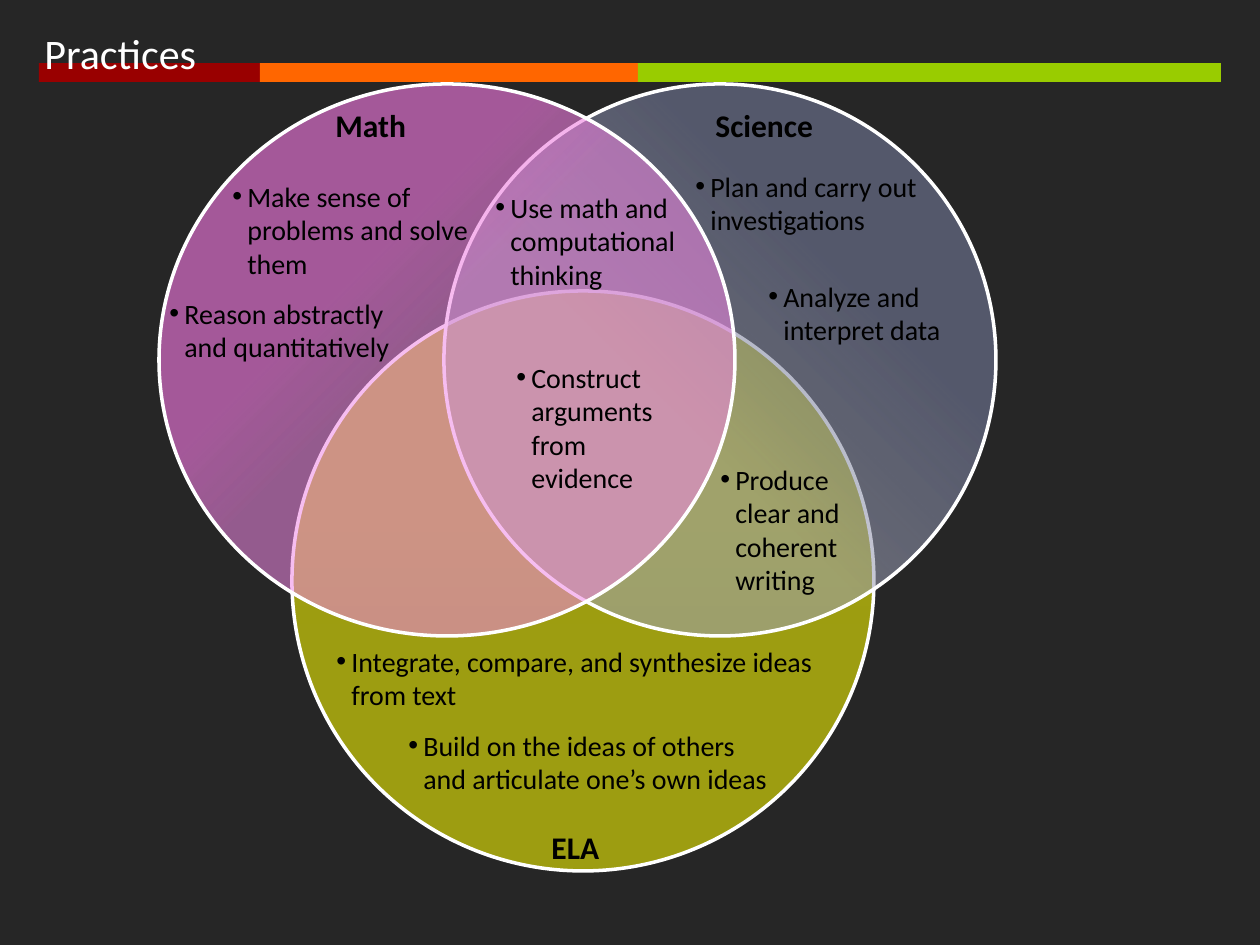
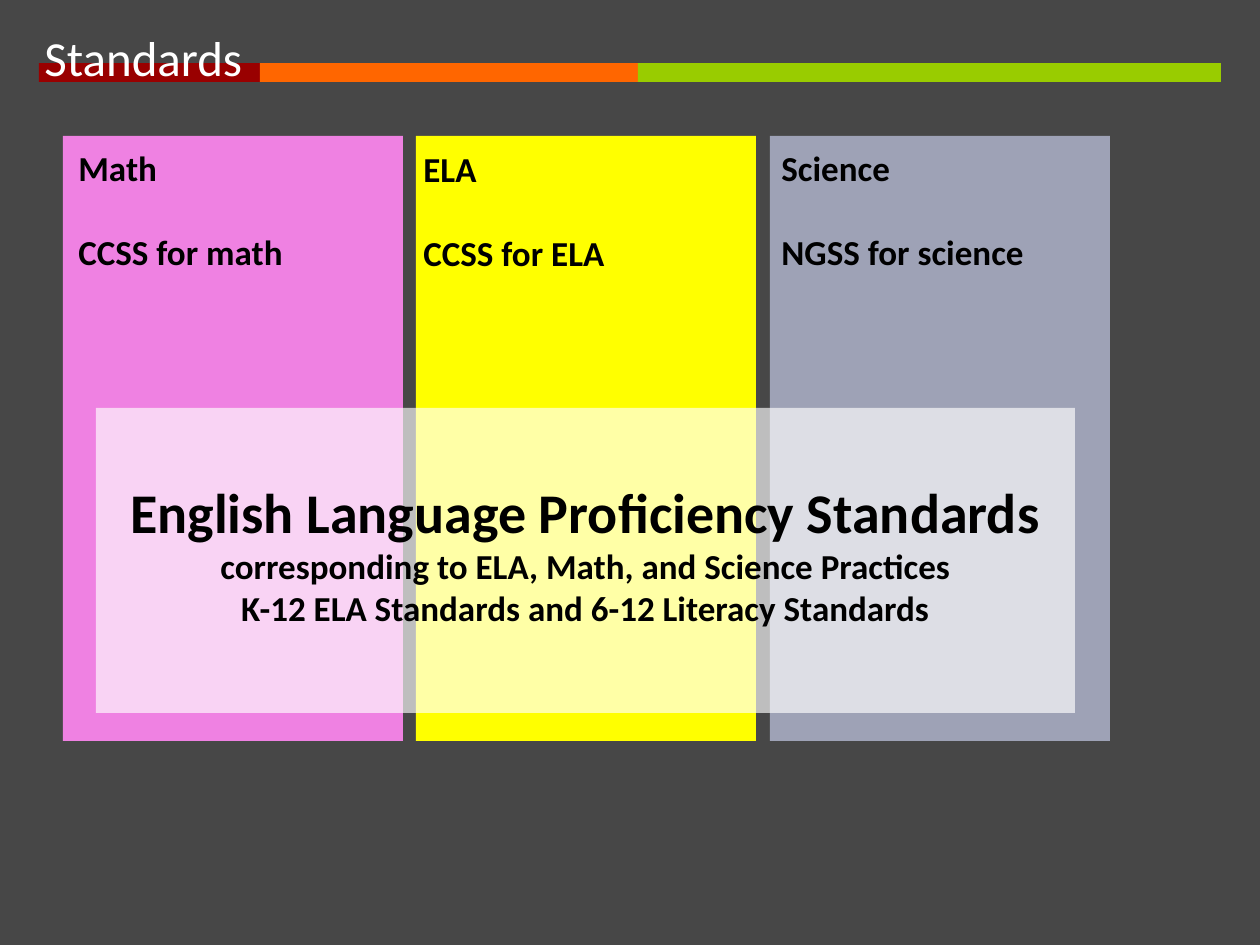
from lxml import etree
from pptx import Presentation
from pptx.dml.color import RGBColor
from pptx.enum.shapes import MSO_SHAPE
from pptx.enum.text import MSO_AUTO_SIZE, PP_ALIGN
from pptx.oxml import parse_xml
from pptx.oxml.ns import nsdecls, qn
from pptx.util import Emu, Pt

RECT, OVAL = MSO_SHAPE.RECTANGLE, MSO_SHAPE.OVAL
LEFT, CENTER = PP_ALIGN.LEFT, PP_ALIGN.CENTER
GROW = MSO_AUTO_SIZE.SHAPE_TO_FIT_TEXT

PX = 914400 / 126
FONT = "Calibri"
BLACK = RGBColor(0x00, 0x00, 0x00)
WHITE = RGBColor(0xFF, 0xFF, 0xFF)
YELLOW = RGBColor(0xFF, 0xFF, 0x00)
PINK = RGBColor(0xEF, 0x81, 0xE2)
GREY_BLUE = RGBColor(0x9E, 0xA2, 0xB6)
VENN_PINK = RGBColor(0xF1, 0x87, 0xE4)
VENN_PINK_DARK = RGBColor(0xEB, 0x75, 0xDA)
VENN_BLUE_DARK = RGBColor(0x6E, 0x74, 0x92)
BANDS = [
    (39, 221, RGBColor(0x99, 0x00, 0x00)),
    (260, 378, RGBColor(0xFF, 0x66, 0x00)),
    (638, 583, RGBColor(0x99, 0xCC, 0x00)),
]


def add_shape(s, kind, box, color):
    sp = s.shapes.add_shape(kind, *[Emu(round(v * PX)) for v in box])
    sp.shadow.inherit = False
    sp.fill.solid()
    sp.fill.fore_color.rgb = color
    sp.line.fill.background()
    return sp


def add_text(s, box, lines, color=BLACK, bold=False, align=LEFT, gap=0, bullet=False):
    """Add one paragraph per (text, size) line, with gap points between lines."""
    tf = s.shapes.add_textbox(*[Emu(round(v * PX)) for v in box]).text_frame
    tf.word_wrap = True
    tf.auto_size = GROW
    for i, (text, size) in enumerate(lines):
        p = tf.paragraphs[0] if i == 0 else tf.add_paragraph()
        p.alignment = align
        p.space_before = Pt(gap if i else 0)
        if bullet:
            pPr = p._p.get_or_add_pPr()
            indent = round(15 * PX)
            pPr.set("marL", str(indent))
            pPr.set("indent", str(-indent))
            etree.SubElement(pPr, qn("a:buFont")).set("typeface", "Arial")
            etree.SubElement(pPr, qn("a:buChar")).set("char", "•")
        r = p.add_run()
        r.text = text
        r.font.name = FONT
        r.font.size = Pt(size)
        r.font.bold = bold
        r.font.color.rgb = color


prs = Presentation()
prs.slide_width = Emu(round(1260 * PX))
prs.slide_height = Emu(round(945 * PX))

# Background, colour bands and title of both slides
slides = []
for title, size, box, background in [
    ("Practices", 24, (32, 21, 231, 63), RGBColor(0x26, 0x26, 0x26)),
    ("Standards", 28, (32, 21, 262, 72), RGBColor(0x47, 0x47, 0x47)),
]:
    s = prs.slides.add_slide(prs.slide_layouts[6])
    s.background.fill.solid()
    s.background.fill.fore_color.rgb = background
    for x, w, color in BANDS:
        add_shape(s, RECT, (x, 63, w, 19), color)
    add_text(s, box, [(title, size)], WHITE)
    slides.append(s)
practices, standards = slides

# Venn circles: gradient stops are (position %, colour, opacity %)
LINEAR = '<a:lin ang="16200000" scaled="1"/>'
FROM_CORNER = '<a:path path="circle"><a:fillToRect {}/></a:path>'
BOTTOM_LEFT = FROM_CORNER.format('t="100000" r="100000"')
BOTTOM_RIGHT = FROM_CORNER.format('l="100000" t="100000"')
for box, stops, direction in [
    ((292, 291, 582, 580), [(37, YELLOW, 54), (61, YELLOW, 57)], LINEAR),
    ((444, 84, 552, 552), [(41, GREY_BLUE, 54), (69, VENN_BLUE_DARK, 64)], BOTTOM_LEFT),
    ((159, 84, 576, 552), [(54, VENN_PINK, 54), (66, VENN_PINK_DARK, 64)], BOTTOM_RIGHT),
]:
    circle = add_shape(practices, OVAL, box, WHITE)
    circle.line.color.rgb = WHITE
    circle.line.width = Pt(2)
    stop_xml = "".join(
        f'<a:gs pos="{pos}000"><a:srgbClr val="{color}">'
        f'<a:alpha val="{opacity}000"/></a:srgbClr></a:gs>'
        for pos, color, opacity in stops
    )
    gradient = parse_xml(
        f'<a:gradFill {nsdecls("a")} rotWithShape="1">'
        f"<a:gsLst>{stop_xml}</a:gsLst>{direction}</a:gradFill>"
    )
    spPr = circle._element.spPr
    spPr.replace(spPr.find(qn("a:solidFill")), gradient)

for subject, x, y, w in [
    ("Math", 323, 100, 107),
    ("Science", 703, 100, 147),
    ("ELA", 539, 822, 147),
]:
    add_text(practices, (x, y, w, 50), [(subject, 18)], bold=True)

for practice, x, y, w, line_count in [
    ("Make sense of problems and solve them", 220, 173, 284, 3),
    ("Reason abstractly and quantitatively", 157, 290, 273, 2),
    ("Plan and carry out investigations", 683, 163, 284, 2),
    ("Analyze and interpret data", 756, 273, 220, 2),
    ("Use math and computational thinking", 483, 184, 213, 3),
    ("Integrate, compare, and synthesize ideas from text", 324, 638, 501, 2),
    ("Build on the ideas of others and articulate one’s own ideas", 396, 722, 388, 2),
    ("Construct arguments from evidence", 504, 354, 189, 4),
    ("Produce clear and coherent writing", 708, 456, 166, 4),
]:
    box = (x, y, w, 13 + 34 * line_count)
    add_text(practices, box, [(practice, 16)], bullet=True)

# Columns of standards, one per subject
for i, (subject, standard, color, text_x, text_y, text_w) in enumerate([
    ("Math", "CCSS for math", PINK, 66, 140, 272),
    ("ELA", "CCSS for ELA", YELLOW, 411, 141, 309),
    ("Science", "NGSS for science", GREY_BLUE, 769, 140, 306),
]):
    add_shape(standards, RECT, (63 + i * 707 // 2, 136, 340, 605), color)
    add_text(standards, (text_x, text_y, text_w, 140),
             [(subject, 20), (standard, 20)], bold=True, gap=24)

# Translucent panel across the columns
panel = add_shape(standards, RECT, (96, 408, 979, 305), WHITE)
panel_color = panel._element.spPr.find(qn("a:solidFill"))[0]
etree.SubElement(panel_color, qn("a:alpha")).set("val", "65000")
add_text(standards, (96, 471, 979, 165), [
    ("English Language Proficiency Standards", 32),
    ("corresponding to ELA, Math, and Science Practices", 20),
    ("K-12 ELA Standards and 6-12 Literacy Standards", 20),
], bold=True, align=CENTER)

prs.save("out.pptx")
